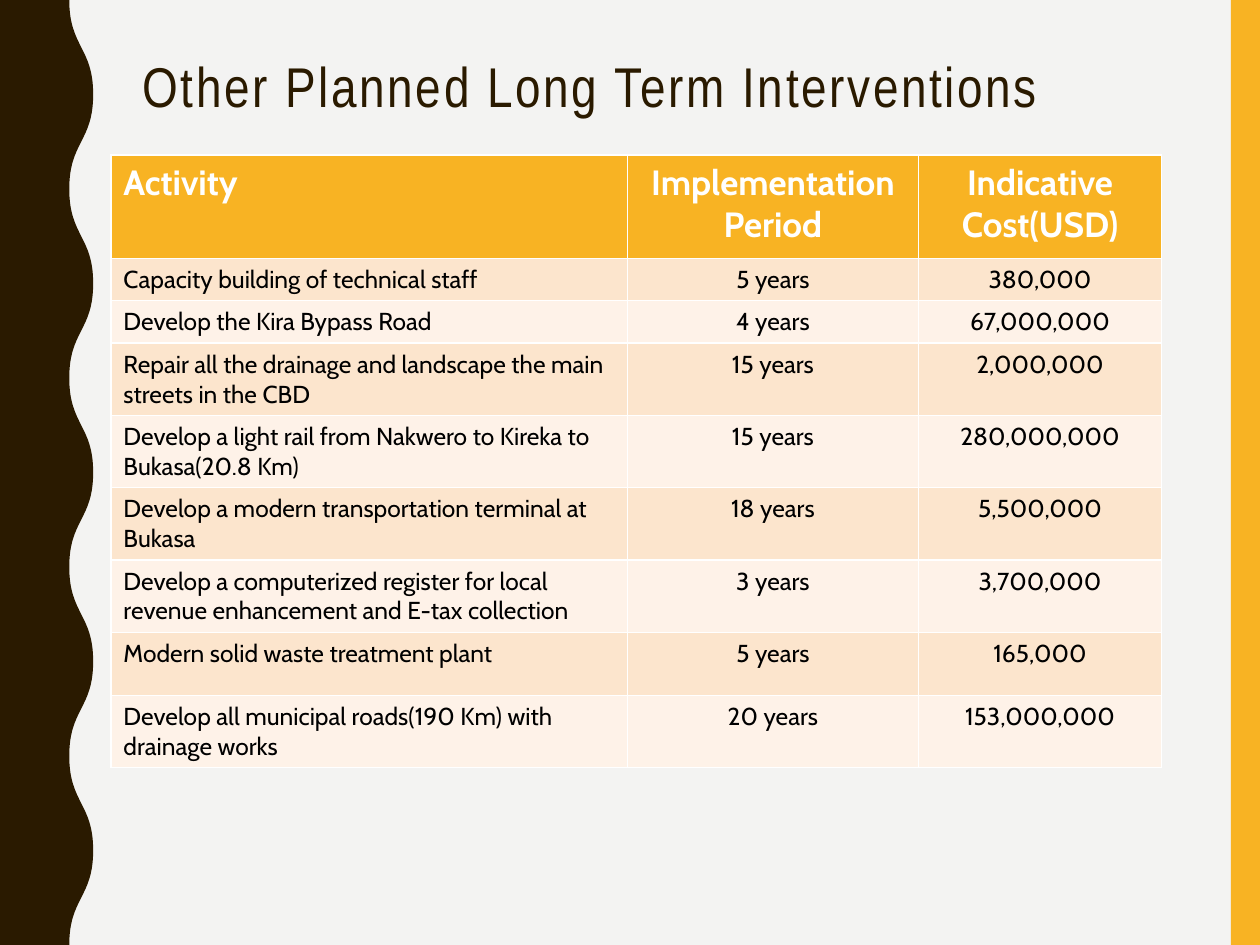
"""Build the slide of planned long term interventions with its cost table."""
import lxml.etree
import pptx
import pptx.dml.color
import pptx.enum.shapes
import pptx.enum.text
import pptx.oxml.ns
import pptx.util

Inches = pptx.util.Inches
Pt = pptx.util.Pt
RGBColor = pptx.dml.color.RGBColor
Align = pptx.enum.text.PP_ALIGN
qn = pptx.oxml.ns.qn

PAPER = RGBColor(0xF3, 0xF3, 0xF2)
BROWN = RGBColor(0x2A, 0x1A, 0x00)
GOLD = RGBColor(0xF8, 0xB3, 0x23)
PEACH = RGBColor(0xFC, 0xE5, 0xCD)
CREAM = RGBColor(0xFE, 0xF2, 0xE8)
WHITE = RGBColor(0xFF, 0xFF, 0xFF)
BLACK = RGBColor(0x00, 0x00, 0x00)

ROWS = [
    ("Activity", "Implementation Period", "Indicative Cost(USD)"),
    ("Capacity building of technical staff", "5 years", "380,000"),
    ("Develop the Kira Bypass Road", "4 years", "67,000,000"),
    ("Repair all the drainage and landscape the main streets in the CBD", "15 years", "2,000,000"),
    ("Develop a light rail from Nakwero to Kireka to Bukasa(20.8 Km)", "15 years", "280,000,000"),
    ("Develop a modern transportation terminal at Bukasa", "18 years", "5,500,000"),
    ("Develop a computerized register for local revenue enhancement and E-tax collection", "3 years", "3,700,000"),
    ("Modern solid waste treatment plant", "5 years", "165,000"),
    ("Develop all municipal roads(190 Km) with drainage works", "20 years", "153,000,000"),
]
WIDTHS = [4.1, 2.31, 1.93]
HEIGHTS = [0.82, 0.3, 0.3] + [0.5] * 6


def paint(shape, color):
    shape.shadow.inherit = False
    shape.fill.solid()
    shape.fill.fore_color.rgb = color
    shape.line.fill.background()


def bend(line, start, end):
    middle = (start[1] + end[1]) // 2
    curve = lxml.etree.Element(qn("a:cubicBezTo"))
    for x, y in ((start[0], middle), (end[0], middle), end):
        lxml.etree.SubElement(curve, qn("a:pt"), x=str(x), y=str(y))
    line.getparent().replace(line, curve)


deck = pptx.Presentation()
deck.slide_width = Inches(10)
deck.slide_height = Inches(7.5)
slide = deck.slides.add_slide(deck.slide_layouts[5])
slide.background.fill.solid()
slide.background.fill.fore_color.rgb = PAPER

band = slide.shapes.add_shape(
    pptx.enum.shapes.MSO_SHAPE.RECTANGLE, Inches(9.77), 0, Inches(0.23), Inches(7.5))
paint(band, GOLD)

points = [(0, 0), (0, Inches(7.5))]
for turn in range(10, -1, -1):
    points.append((Inches(0.74 if turn % 2 else 0.55), Inches(0.75 * turn)))
outline = slide.shapes.build_freeform(0, 0)
outline.add_line_segments(points[1:], close=True)
wave = outline.convert_to_shape()
paint(wave, BROWN)
lines = list(wave._element.iter(qn("a:lnTo")))
for line, start, end in zip(lines[2:], points[2:], points[3:]):
    bend(line, start, end)

title = slide.shapes.title
title.left, title.top = Inches(1.03), Inches(0.42)
title.width, title.height = Inches(8.35), Inches(1.63)
frame = title.text_frame
frame.text = "Other Planned Long Term Interventions"
frame.word_wrap = True
frame.auto_size = pptx.enum.text.MSO_AUTO_SIZE.NONE
frame.vertical_anchor = pptx.enum.text.MSO_ANCHOR.TOP
head = frame.paragraphs[0]
head.alignment = Align.LEFT
head.line_spacing = 0.9
font = head.runs[0].font
font.name = "Arial Narrow"
font.size = Pt(32)
font.color.rgb = BROWN
font._element.set("spc", "150")

table = slide.shapes.add_table(
    len(ROWS), len(WIDTHS), Inches(0.88), Inches(1.23),
    Inches(8.35), Inches(4.82)).table
for column, width in zip(table.columns, WIDTHS):
    column.width = Inches(width)
for r, (texts, height) in enumerate(zip(ROWS, HEIGHTS)):
    table.rows[r].height = Inches(height)
    for c, text in enumerate(texts):
        cell = table.cell(r, c)
        cell.fill.solid()
        cell.fill.fore_color.rgb = GOLD if r == 0 else PEACH if r % 2 else CREAM
        cell.text_frame.text = text
        para = cell.text_frame.paragraphs[0]
        para.alignment = Align.CENTER if c else Align.LEFT
        font = para.runs[0].font
        font.name = "Cabin"
        font.size = Pt(14 if r else 20)
        font.bold = r == 0
        font.color.rgb = BLACK if r else WHITE

deck.save("out.pptx")
